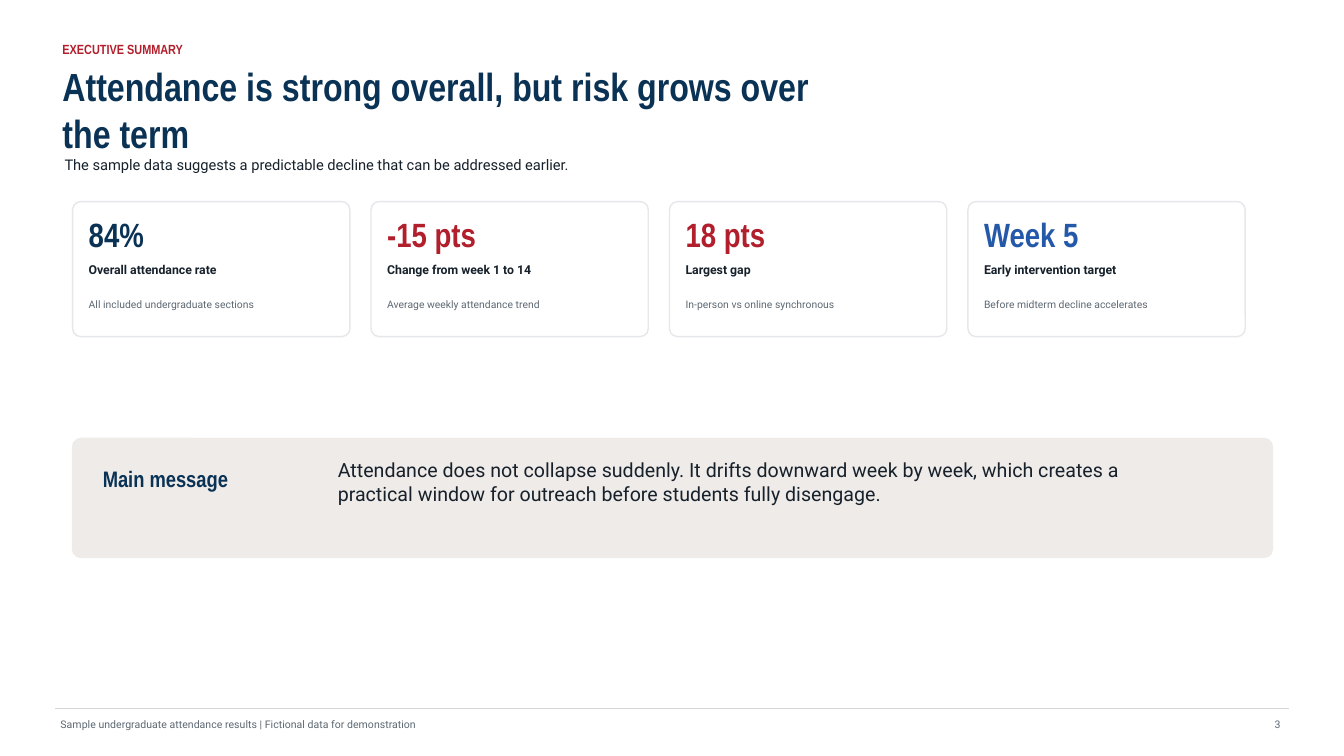
from lxml import etree
from pptx import Presentation
from pptx.dml.color import RGBColor
from pptx.enum.shapes import MSO_CONNECTOR, MSO_SHAPE
from pptx.enum.text import MSO_ANCHOR, PP_ALIGN
from pptx.oxml.ns import qn
from pptx.util import Inches, Pt

ROUND = MSO_SHAPE.ROUNDED_RECTANGLE
STRAIGHT = MSO_CONNECTOR.STRAIGHT
MIDDLE = MSO_ANCHOR.MIDDLE
LEFT, RIGHT = PP_ALIGN.LEFT, PP_ALIGN.RIGHT

HEAD, BODY = "Arial Narrow", "Roboto"
COLORS = {
    "white": "FFFFFF", "navy": "0A3255", "red": "B21F2C", "blue": "2459A9",
    "ink": "17212B", "gray": "5D6872", "edge": "E5E7EB", "sand": "EFEBE9",
    "rule": "D6D6D6",
}
CARDS = [
    ("84%", "navy", "Overall attendance rate", "All included undergraduate sections"),
    ("-15 pts", "red", "Change from week 1 to 14", "Average weekly attendance trend"),
    ("18 pts", "red", "Largest gap", "In-person vs online synchronous"),
    ("Week 5", "blue", "Early intervention target", "Before midterm decline accelerates"),
]
CARD_LEFT, CARD_STEP = 0.72, 2.96


def color(name):
    return RGBColor.from_string(COLORS[name])


def add_text(slide, box, text, size, font, tint, bold=False, align=LEFT):
    frame = slide.shapes.add_textbox(*map(Inches, box)).text_frame
    frame.word_wrap = True
    frame.vertical_anchor = MIDDLE
    frame.margin_left = frame.margin_right = 0
    frame.margin_top = frame.margin_bottom = 0
    para = frame.paragraphs[0]
    para.alignment = align
    run = para.add_run()
    run.text = text
    run.font.size = Pt(size)
    run.font.name = font
    run.font.bold = bold
    run.font.color.rgb = color(tint)


def add_panel(slide, box, fill, edge, curve):
    panel = slide.shapes.add_shape(ROUND, *map(Inches, box))
    panel.adjustments[0] = curve
    panel.shadow.inherit = False
    panel.fill.solid()
    panel.fill.fore_color.rgb = color(fill)
    panel.line.color.rgb = color(edge)
    panel.line.width = Pt(1)


def add_rule(slide, left, right, top):
    rule = slide.shapes.add_connector(
        STRAIGHT, Inches(left), Inches(top), Inches(right), Inches(top))
    rule.line.color.rgb = color("rule")
    rule.line.width = Pt(0.75)
    etree.SubElement(rule._element.spPr, qn("a:effectLst"))


def add_card(slide, left, value, tint, label, note):
    add_panel(slide, (left, 2, 2.75, 1.34), "white", "edge", 0.06)
    inner = left + 0.16
    add_text(slide, (inner, 2.13, 2.4, 0.38), value, 24, HEAD, tint, True)
    add_text(slide, (inner, 2.56, 2.4, 0.22), label, 8.8, BODY, "ink", True)
    add_text(slide, (inner, 2.86, 2.35, 0.32), note, 7.4, BODY, "gray")


def main():
    deck = Presentation()
    deck.slide_width, deck.slide_height = Inches(13.33), Inches(7.5)
    slide = deck.slides.add_slide(deck.slide_layouts[6])
    slide.background.fill.solid()
    slide.background.fill.fore_color.rgb = color("white")

    # Heading
    add_text(slide, (0.62, 0.36, 5.8, 0.25), "EXECUTIVE SUMMARY",
             9.5, HEAD, "red", True)
    add_text(slide, (0.62, 0.74, 7.7, 0.68),
             "Attendance is strong overall, but risk grows over the term",
             28, HEAD, "navy", True)
    add_text(slide, (0.64, 1.46, 8.4, 0.35),
             "The sample data suggests a predictable decline that can be "
             "addressed earlier.", 10.5, BODY, "ink")

    # Metric cards
    for i, card in enumerate(CARDS):
        add_card(slide, CARD_LEFT + i * CARD_STEP, *card)

    # Main message
    add_panel(slide, (CARD_LEFT, 4.35, 11.9, 1.18), "sand", "sand", 0.07)
    add_text(slide, (1.02, 4.62, 2.1, 0.25), "Main message",
             16, HEAD, "navy", True)
    add_text(slide, (3.35, 4.57, 8.55, 0.42),
             "Attendance does not collapse suddenly. It drifts downward week "
             "by week, which creates a practical window for outreach before "
             "students fully disengage.", 14, BODY, "ink")

    # Footer
    add_rule(slide, 0.55, 12.78, 7.03)
    add_text(slide, (0.6, 7.08, 8.6, 0.22),
             "Sample undergraduate attendance results | Fictional data for "
             "demonstration", 7.5, BODY, "gray")
    add_text(slide, (12.35, 7.08, 0.35, 0.22), "3", 7.5, BODY, "gray",
             align=RIGHT)

    deck.save("out.pptx")


if __name__ == "__main__":
    main()
